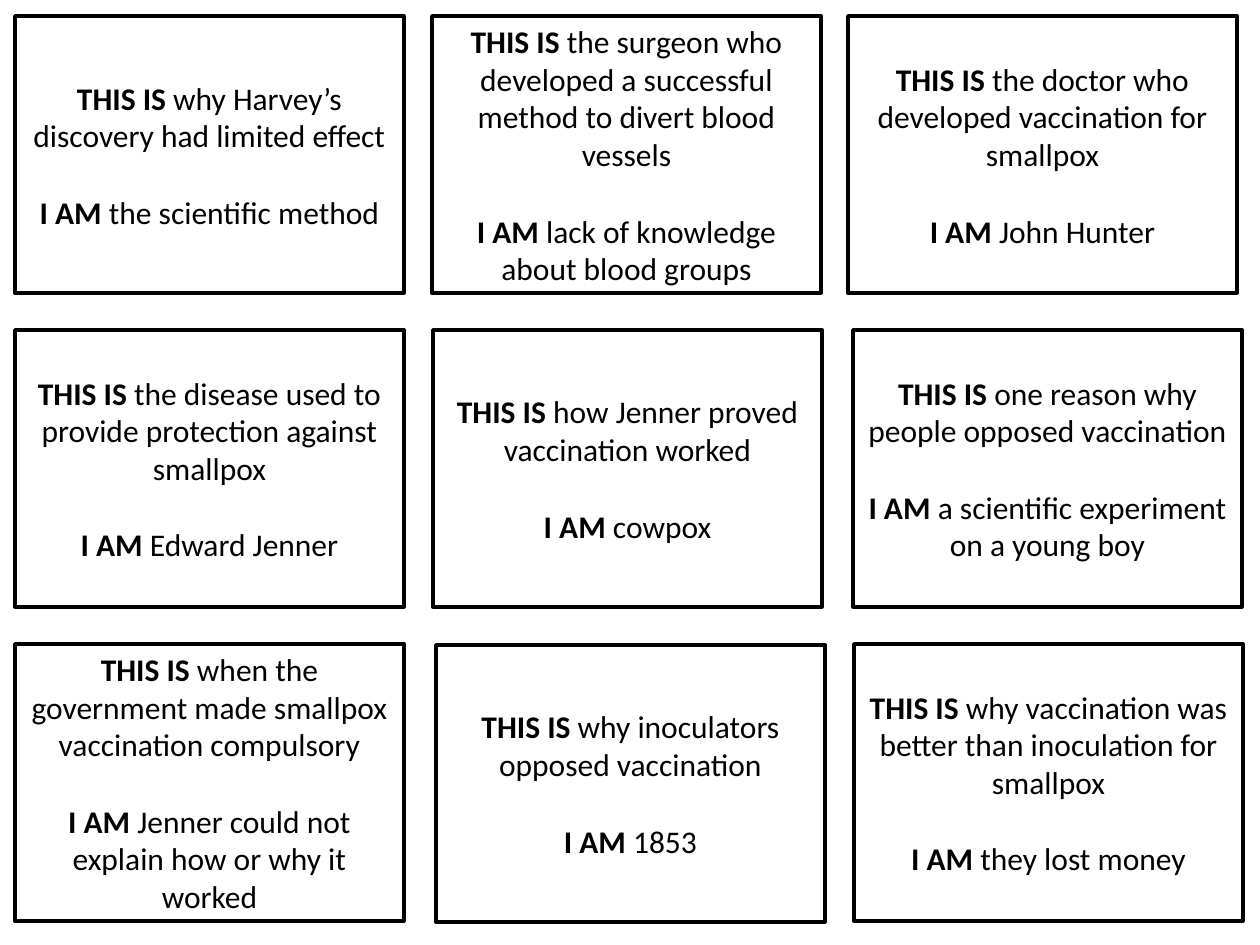
from pptx import Presentation
from pptx.dml.color import RGBColor
from pptx.enum.shapes import MSO_SHAPE as Shape
from pptx.enum.text import MSO_ANCHOR as Anchor, PP_ALIGN as Align
from pptx.util import Pt

EMU_PER_PX = 914400 / 126
SLIDE_W, SLIDE_H = 1260, 945
CARD_W, CARD_H = 389, 277
FIRST_TOP, ROW_PITCH = 16, 314

# Each row: cards as (left, nudge down, question, answer)
CARD_ROWS = [
    [
        (15, 0, "why Harvey’s discovery had limited effect",
         "the scientific method"),
        (432, 0, "the surgeon who developed a successful method to divert "
         "blood vessels", "lack of knowledge about blood groups"),
        (848, 0, "the doctor who developed vaccination for smallpox",
         "John Hunter"),
    ],
    [
        (15, 0, "the disease used to provide protection against smallpox",
         "Edward Jenner"),
        (433, 0, "how Jenner proved vaccination worked", "cowpox"),
        (853, 0, "one reason why people opposed vaccination",
         "a scientific experiment on a young boy"),
    ],
    [
        (15, 0, "when the government made smallpox vaccination compulsory",
         "Jenner could not explain how or why it worked"),
        (436, 1, "why inoculators opposed vaccination", "1853"),
        (854, 0, "why vaccination was better than inoculation for smallpox",
         "they lost money"),
    ],
]


def px(length):
    return round(length * EMU_PER_PX)


def color(hex_value):
    return RGBColor.from_string(hex_value)


class CardSheet:
    ink, paper = "000000", "FFFFFF"
    font_format = {"name": "Calibri", "size": Pt(18)}
    frame_format = {"word_wrap": True, "vertical_anchor": Anchor.MIDDLE}
    answer_gap = Pt(22)

    def __init__(self, slide):
        self.slide = slide

    def run(self, paragraph, text, bold):
        run = paragraph.add_run()
        run.text = text
        for name, value in {**self.font_format, "bold": bold}.items():
            setattr(run.font, name, value)
        run.font.color.rgb = color(self.ink)

    def statement(self, paragraph, lead, rest):
        paragraph.alignment = Align.CENTER
        self.run(paragraph, lead, True)
        self.run(paragraph, f" {rest}", False)

    def card(self, left, top, question, answer):
        card = self.slide.shapes.add_shape(
            Shape.RECTANGLE, px(left), px(top), px(CARD_W), px(CARD_H))
        card.shadow.inherit = False
        card.fill.solid()
        card.fill.fore_color.rgb = color(self.paper)
        card.line.color.rgb = color(self.ink)
        card.line.width = Pt(2)
        frame = card.text_frame
        for name, value in self.frame_format.items():
            setattr(frame, name, value)
        self.statement(frame.paragraphs[0], "THIS IS", question)
        reply = frame.add_paragraph()
        reply.space_before = self.answer_gap
        self.statement(reply, "I AM", answer)


def main():
    deck = Presentation()
    deck.slide_width, deck.slide_height = px(SLIDE_W), px(SLIDE_H)
    blank_layout = deck.slide_layouts[6]
    sheet = CardSheet(deck.slides.add_slide(blank_layout))

    # Grid of question-and-answer cards
    for row, cards in enumerate(CARD_ROWS):
        for left, nudge, question, answer in cards:
            top = FIRST_TOP + row * ROW_PITCH + nudge
            sheet.card(left, top, question, answer)

    deck.save("out.pptx")


if __name__ == "__main__":
    main()
